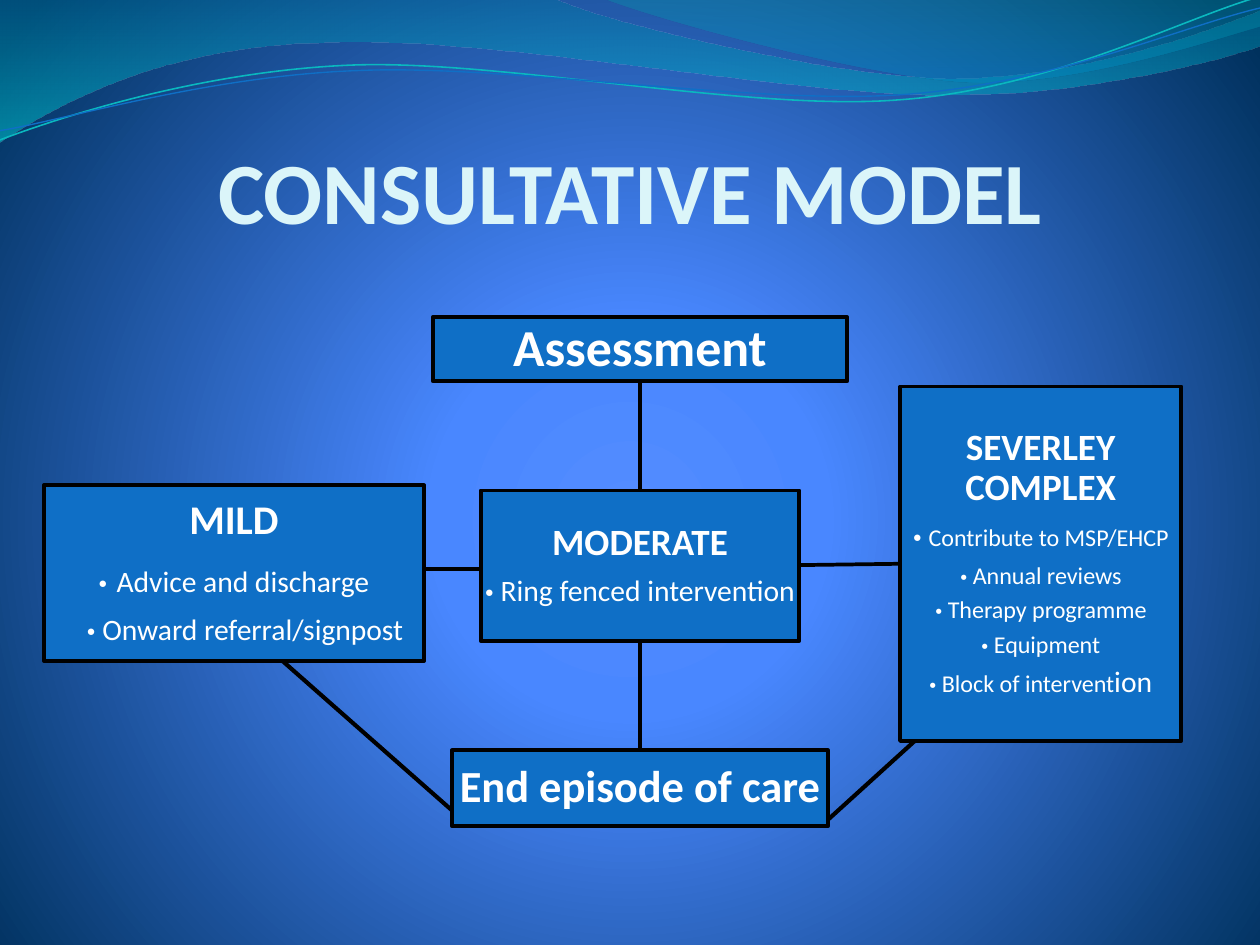
from lxml import etree
from pptx import Presentation
from pptx.dml.color import RGBColor
from pptx.enum.shapes import MSO_CONNECTOR, MSO_SHAPE
from pptx.enum.text import MSO_ANCHOR, PP_ALIGN
from pptx.oxml import parse_xml
from pptx.oxml.ns import nsdecls, qn
from pptx.util import Inches, Pt

STRAIGHT = MSO_CONNECTOR.STRAIGHT
RECTANGLE = MSO_SHAPE.RECTANGLE
LEFT, CENTER = PP_ALIGN.LEFT, PP_ALIGN.CENTER
MIDDLE, BOTTOM = MSO_ANCHOR.MIDDLE, MSO_ANCHOR.BOTTOM

BLUE = RGBColor(0x0F, 0x6F, 0xC6)
TEAL = RGBColor(0x0A, 0xB8, 0xBF)
PALE = RGBColor(0xDB, 0xF5, 0xF9)
WHITE = RGBColor(0xFF, 0xFF, 0xFF)
BLACK = RGBColor(0, 0, 0)
WIDTH, HEIGHT = 9.45, 7.09


def set_gradient(holder, stops, direction):
    """Replace the solid fill in holder by a gradient of (percent, colour, opacity)."""
    marks = "".join(
        f'<a:gs pos="{pos * 1000}"><a:srgbClr val="{color}">'
        f'<a:alpha val="{opacity * 1000}"/></a:srgbClr></a:gs>'
        for pos, color, opacity in stops)
    gradient = parse_xml(f'<a:gradFill {nsdecls("a")} rotWithShape="1">'
                         f'<a:gsLst>{marks}</a:gsLst>{direction}</a:gradFill>')
    holder.replace(holder.find(qn("a:solidFill")), gradient)


def add_wave(start, pieces, closed):
    """Draw pieces of one point (a line) or three points (a cubic curve)."""
    builder = page.shapes.build_freeform(*map(Inches, start))
    builder.add_line_segments([tuple(map(Inches, point)) for piece in pieces
                               for point in piece], close=closed)
    shape = builder.convert_to_shape()
    shape.shadow.inherit = False
    lines = iter(list(shape.element.iter(qn("a:lnTo"))))
    for piece in pieces:
        line = next(lines)
        if len(piece) == 3:
            curve = etree.Element(qn("a:cubicBezTo"))
            line.addprevious(curve)
            for part in (line, next(lines), next(lines)):
                curve.append(part[0])
                part.getparent().remove(part)
    return shape


deck = Presentation()
deck.slide_width, deck.slide_height = Inches(WIDTH), Inches(HEIGHT)
page = deck.slides.add_slide(deck.slide_layouts[6])

# Background glow
page.background.fill.solid()
set_gradient(page.element.find(".//" + qn("p:bgPr")),
             [(0, "538CFF", 100), (25, "4987FF", 100), (100, "00315D", 100)],
             '<a:path path="circle">'
             '<a:fillToRect l="10000" t="110000" r="10000" b="100000"/></a:path>')

# Waves: start, pieces, gradient stops (None for a line), line colour and width
waves = [
    ((0, 0), [[(4.16, -0.01)],
              [(4.5, 0.16), (6.27, 0.59), (7.17, 0.59)],
              [(8.06, 0.59), (9.06, 0.24), (9.45, 0.08)],
              [(9.46, 0.34)],
              [(9.29, 0.41), (8.22, 0.72), (7.05, 0.71)],
              [(5.88, 0.71), (3.61, 0.26), (2.43, 0.32)],
              [(1.22, 0.34), (0.43, 0.78), (-0.01, 1.07)]],
     [(0, "0074A1", 45), (100, "00C6CF", 55)], None, 0),
    ((4.53, -0.01), [[(4.81, 0.11), (6.44, 0.58), (7.26, 0.62)],
                     [(8.08, 0.65), (9.09, 0.3), (9.45, 0.2)],
                     [(9.45, 0)]],
     [(0, "00A1A9", 30), (80, "008BBF", 45)], None, 0),
    ((0, 1.05), [[(0.45, 0.88), (1.49, 0.54), (2.61, 0.49)],
                 [(3.74, 0.44), (5.6, 0.84), (6.74, 0.75)],
                 [(7.87, 0.67), (8.87, 0.14), (9.43, -0.02)]],
     None, TEAL, 0.85),
    ((0, 0.98), [[(0.45, 0.91), (1.55, 0.57), (2.68, 0.53)],
                 [(3.8, 0.48), (5.64, 0.79), (6.77, 0.71)],
                 [(7.9, 0.63), (8.89, 0.19), (9.45, 0.06)]],
     None, BLUE, 0.75),
]
for start, pieces, stops, color, weight in waves:
    wave = add_wave(start, pieces, stops is not None)
    if stops:
        wave.fill.solid()
        set_gradient(wave.element.spPr, stops, '<a:lin ang="5400000" scaled="1"/>')
        wave.line.fill.background()
    else:
        wave.fill.background()
        wave.line.color.rgb = color
        wave.line.width = Pt(weight)

# Title
title = page.shapes.add_textbox(Inches(0.05 * WIDTH), Inches(0.09 * HEIGHT),
                                Inches(0.9 * WIDTH), Inches(1.18))
frame = title.text_frame
frame.word_wrap = True
frame.vertical_anchor = BOTTOM
frame.margin_left = frame.margin_right = frame.margin_bottom = 0
para = frame.paragraphs[0]
para.text = "CONSULTATIVE MODEL"
para.alignment = CENTER
para.font.name, para.font.size, para.font.bold = "Calibri", Pt(47.2), True
para.font.color.rgb = PALE

# Flow: the middle column stands on one axis with equal gaps
AXIS, GAP = 4.8, 0.82
assess_top, assess_height = 2.38, 0.48
moderate_top, moderate_height = assess_top + assess_height + GAP, 1.13
end_top, end_height = moderate_top + moderate_height + GAP, 0.57
moderate_width, end_width = 2.39, 2.82
moderate_left, moderate_right = AXIS - moderate_width / 2, AXIS + moderate_width / 2
end_left, end_right = AXIS - end_width / 2, AXIS + end_width / 2
mild_left, mild_top, mild_width, mild_height = 0.33, 3.64, 2.85, 1.32
mild_right, mild_bottom = mild_left + mild_width, mild_top + mild_height
severe_left, severe_top, severe_width, severe_height = 6.75, 2.9, 2.11, 2.66

# Connectors
connectors = [
    (AXIS, moderate_top, AXIS, moderate_top - GAP, 2),
    (AXIS, end_top - GAP, AXIS, end_top, 2),
    (moderate_right, 4.24, severe_left, 4.23, 2),
    (moderate_left, 4.27, mild_right, 4.27, 2),
    (2.12, mild_bottom, end_left, 6.08, 2.25),
    (6.86, severe_top + severe_height, end_right, 6.15, 2.25),
]
for x1, y1, x2, y2, weight in connectors:
    link = page.shapes.add_connector(STRAIGHT, *map(Inches, (x1, y1, x2, y2)))
    link.line.color.rgb = BLACK
    link.line.width = Pt(weight)
    etree.SubElement(link._element.spPr, qn("a:effectLst"))

# Boxes: place, heading, heading size, lines as (alignment, runs of text and size)
boxes = [
    ((moderate_left, moderate_top, moderate_width, moderate_height), "MODERATE", 20,
     [(CENTER, [("• ", 16), ("Ring fenced intervention", 16)])]),
    ((AXIS - 3.11 / 2, assess_top, 3.11, assess_height), "Assessment", 28, []),
    ((severe_left, severe_top, severe_width, severe_height), "SEVERLEY COMPLEX", 20,
     [(CENTER, [("• ", 16), ("Contribute to MSP/EHCP", 13)]),
      (CENTER, [("• ", 13), ("Annual reviews", 13)]),
      (CENTER, [("• ", 13), ("Therapy programme", 13)]),
      (CENTER, [("• ", 13), ("Equipment", 13)]),
      (CENTER, [("• ", 13), ("Block of intervent", 13), ("ion", 16)])]),
    ((end_left, end_top, end_width, end_height), "End episode of care", 24, []),
    ((mild_left, mild_top, mild_width, mild_height), "MILD", 22,
     [(CENTER, [("•", 16), (" ", 22), ("Advice and discharge", 16)]),
      (LEFT, [("• ", 16), ("Onward referral/signpost", 16)])]),
]
for place, heading, heading_size, lines in boxes:
    box = page.shapes.add_shape(RECTANGLE, *map(Inches, place))
    box.shadow.inherit = False
    box.fill.solid()
    box.fill.fore_color.rgb = BLUE
    box.line.color.rgb = BLACK
    box.line.width = Pt(2)
    frame = box.text_frame
    frame.word_wrap = True
    frame.vertical_anchor = MIDDLE
    frame.margin_left = frame.margin_right = Inches(0.01)
    frame.margin_top = frame.margin_bottom = Inches(0.01)
    for row, (alignment, runs) in enumerate([(CENTER, [(heading, heading_size)])] + lines):
        para = frame.add_paragraph() if row else frame.paragraphs[0]
        para.alignment = alignment
        para.line_spacing = 0.9
        para.font.bold = row == 0
        para.font.color.rgb = WHITE
        settings = para._p.get_or_add_pPr()
        after = parse_xml(f'<a:spcAft {nsdecls("a")}><a:spcPct val="35000"/></a:spcAft>')
        settings.insert(1, after)
        if alignment == LEFT:
            settings.set("marL", str(Inches(0.31)))
        for text, size in runs:
            span = para.add_run()
            span.text = text
            span.font.size = Pt(size)
            span.font.name = "Cabin" if text.strip() in ("•", "") else "Calibri"

deck.save("out.pptx")
